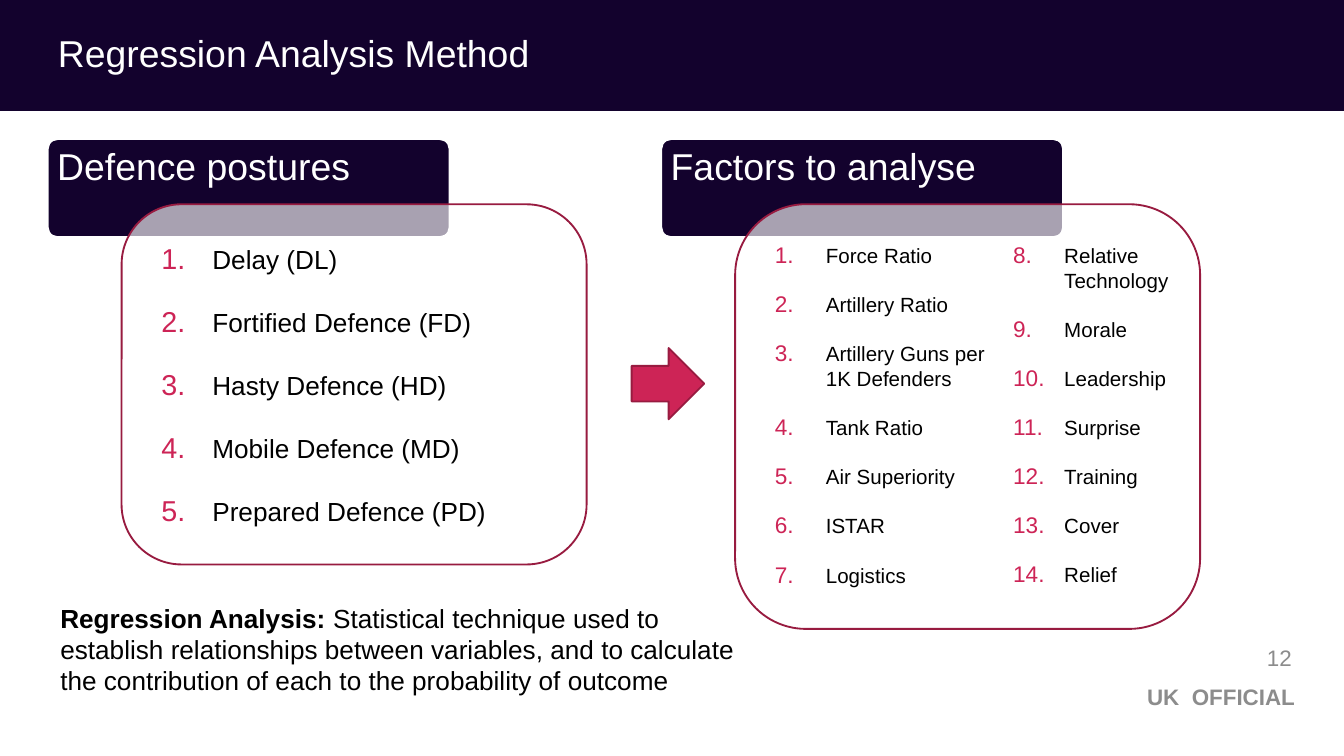
from dataclasses import dataclass

import lxml.etree
import pptx
import pptx.dml.color
import pptx.enum.shapes
import pptx.enum.text
import pptx.oxml.ns
import pptx.util

NAVY = pptx.dml.color.RGBColor(0x13, 0x02, 0x2D)
CRIMSON = pptx.dml.color.RGBColor(0xCD, 0x24, 0x56)
BURGUNDY = pptx.dml.color.RGBColor(0x98, 0x1B, 0x40)
GREY = pptx.dml.color.RGBColor(0x8C, 0x8C, 0x8C)
WHITE = pptx.dml.color.RGBColor(0xFF, 0xFF, 0xFF)
BLACK = pptx.dml.color.RGBColor(0, 0, 0)

FONT = "Arial"
SLIDE_WIDTH = pptx.util.Inches(10)
SLIDE_HEIGHT = SLIDE_WIDTH * 9 // 16
COLUMN = SLIDE_WIDTH / 100
ROW = SLIDE_HEIGHT / 56.25
HANGING_INDENT = pptx.util.Inches(0.38)

SHAPE = pptx.enum.shapes.MSO_SHAPE
ALIGN = pptx.enum.text.PP_ALIGN
ANCHOR = pptx.enum.text.MSO_ANCHOR


@dataclass
class Box:
    column: float
    row: float
    columns: float
    rows: float

    def emu(self) -> tuple[int, int, int, int]:
        return (round(self.column * COLUMN), round(self.row * ROW),
                round(self.columns * COLUMN), round(self.rows * ROW))


@dataclass
class NumberedList:
    column: float
    columns: float
    rows: float
    size: float
    gap: float
    start: int
    items: list[str]


@dataclass
class Card:
    heading: str
    column: float
    panel_rows: float
    lists: list[NumberedList]


CARDS = [
    Card("Defence postures", 3.55, 26.8, [
        NumberedList(11, 30.7, 22.2, 14, 16.9, 1, [
            "Delay (DL)", "Fortified Defence (FD)", "Hasty Defence (HD)",
            "Mobile Defence (MD)", "Prepared Defence (PD)"]),
    ]),
    Card("Factors to analyse", 49.2, 31.6, [
        NumberedList(56.65, 17.7, 26.9, 11, 13.1, 1, [
            "Force Ratio", "Artillery Ratio", "Artillery Guns per 1K Defenders",
            "Tank Ratio", "Air Superiority", "ISTAR", "Logistics"]),
        NumberedList(74.4, 14.2, 26.9, 11, 13.1, 8, [
            "Relative Technology", "Morale", "Leadership", "Surprise",
            "Training", "Cover", "Relief"]),
    ]),
]


def place(shape, box: Box) -> None:
    shape.left, shape.top, shape.width, shape.height = box.emu()


def bring_to_front(shape) -> None:
    shape.element.getparent().append(shape.element)


def add_block(slide, kind, box: Box, fill, line=None, opacity: int = 100):
    shape = slide.shapes.add_shape(kind, *box.emu())
    shape.shadow.inherit = False
    shape.fill.solid()
    shape.fill.fore_color.rgb = fill
    if line is None:
        shape.line.fill.background()
    else:
        shape.line.color.rgb = line
        shape.line.width = pptx.util.Pt(1)
    if opacity < 100:
        color = shape.element.spPr.find(".//" + pptx.oxml.ns.qn("a:srgbClr"))
        alpha = lxml.etree.SubElement(color, pptx.oxml.ns.qn("a:alpha"))
        alpha.set("val", str(opacity * 1000))
    return shape


def set_frame(frame, insets=(0.1, 0.05, 0.1, 0.05), anchor=ANCHOR.TOP) -> None:
    frame.word_wrap = True
    frame.auto_size = pptx.enum.text.MSO_AUTO_SIZE.NONE
    frame.vertical_anchor = anchor
    (frame.margin_left, frame.margin_top,
     frame.margin_right, frame.margin_bottom) = map(pptx.util.Inches, insets)


def style(paragraph, size: float, color, bold: bool = False, align=ALIGN.LEFT) -> None:
    paragraph.alignment = align
    paragraph.font.name = FONT
    paragraph.font.size = pptx.util.Pt(size)
    paragraph.font.color.rgb = color
    paragraph.font.bold = bold


def add_text(slide, box: Box, text: str, size: float, color, bold=False,
             align=ALIGN.LEFT, **frame_options):
    shape = slide.shapes.add_textbox(*box.emu())
    set_frame(shape.text_frame, **frame_options)
    paragraph = shape.text_frame.paragraphs[0]
    paragraph.text = text
    style(paragraph, size, color, bold, align)
    return paragraph


def number_paragraph(paragraph, start: int) -> None:
    properties = paragraph._p.get_or_add_pPr()
    properties.set("marL", str(HANGING_INDENT))
    properties.set("indent", str(-HANGING_INDENT))
    qualify = pptx.oxml.ns.qn
    bullet_color = lxml.etree.SubElement(properties, qualify("a:buClr"))
    lxml.etree.SubElement(bullet_color, qualify("a:srgbClr")).set("val", str(CRIMSON))
    lxml.etree.SubElement(properties, qualify("a:buSzPct")).set("val", "110000")
    lxml.etree.SubElement(properties, qualify("a:buFont")).set("typeface", FONT)
    numbering = lxml.etree.SubElement(properties, qualify("a:buAutoNum"))
    numbering.set("type", "arabicPeriod")
    if start > 1:
        numbering.set("startAt", str(start))


def fill_list(shape, numbered: NumberedList) -> None:
    place(shape, Box(numbered.column, 17.6, numbered.columns, numbered.rows))
    frame = shape.text_frame
    set_frame(frame)
    for index, item in enumerate(numbered.items):
        paragraph = frame.add_paragraph() if index else frame.paragraphs[0]
        paragraph.text = item
        number_paragraph(paragraph, numbered.start)
        paragraph.space_before = pptx.util.Pt(numbered.gap if index else 0)
        style(paragraph, numbered.size, BLACK)
    bring_to_front(shape)


def add_card(slide, card: Card, list_shapes) -> None:
    tab = add_block(slide, SHAPE.ROUNDED_RECTANGLE,
                    Box(card.column, 10.35, 29.9, 7.3), NAVY, WHITE)
    tab.adjustments[0] = 0.1
    heading = add_text(slide, Box(card.column, 10.35, 29.9, 4.9), card.heading,
                       20, WHITE, insets=(0.07, 0.07, 0.07, 0.04))
    heading.line_spacing = 0.9
    add_block(slide, SHAPE.ROUNDED_RECTANGLE,
              Box(card.column + 5.5, 15.2, 34.6, card.panel_rows),
              WHITE, BURGUNDY, opacity=63)
    for shape, numbered in zip(list_shapes, card.lists):
        fill_list(shape, numbered)


def add_title(slide, text: str) -> None:
    add_block(slide, SHAPE.RECTANGLE, Box(0, 0, 100, 8.25), NAVY)
    title = slide.shapes.title
    place(title, Box(0.4, 0.6, 74.8, 7.1))
    set_frame(title.text_frame, (0.39, 0.05, 0.1, 0.05), ANCHOR.MIDDLE)
    paragraph = title.text_frame.paragraphs[0]
    paragraph.text = text
    paragraph.line_spacing = 0.9
    style(paragraph, 20, WHITE)
    bring_to_front(title)


def main() -> None:
    presentation = pptx.Presentation()
    presentation.slide_width = SLIDE_WIDTH
    presentation.slide_height = SLIDE_HEIGHT
    slide = presentation.slides.add_slide(presentation.slide_layouts[3])
    postures, factors = slide.placeholders[1], slide.placeholders[2]
    more_factors = slide.shapes.add_textbox(0, 0, 0, 0)

    add_title(slide, "Regression Analysis Method")
    add_text(slide, Box(74.6, 47.8, 22.5, 2.3), "12", 12, GREY,
             align=ALIGN.RIGHT, anchor=ANCHOR.MIDDLE)
    add_text(slide, Box(15.4, 50.3, 81.8, 3), "UK  OFFICIAL ", 12, GREY, True,
             ALIGN.RIGHT, insets=(0.1, 0.05, 0.04, 0.05), anchor=ANCHOR.MIDDLE)
    for card, list_shapes in zip(CARDS, ([postures], [factors, more_factors])):
        add_card(slide, card, list_shapes)
    add_block(slide, SHAPE.RIGHT_ARROW, Box(47, 25.9, 5.4, 5.3), CRIMSON, BURGUNDY)

    definition = add_text(slide, Box(3.5, 44.3, 53.5, 8.1),
                          "Regression Analysis: ", 14, BLACK)
    definition.runs[0].font.bold = True
    definition.add_run().text = (
        "Statistical technique used to establish relationships between variables, "
        "and to calculate the contribution of each to the probability of outcome")
    presentation.save("out.pptx")


if __name__ == "__main__":
    main()
